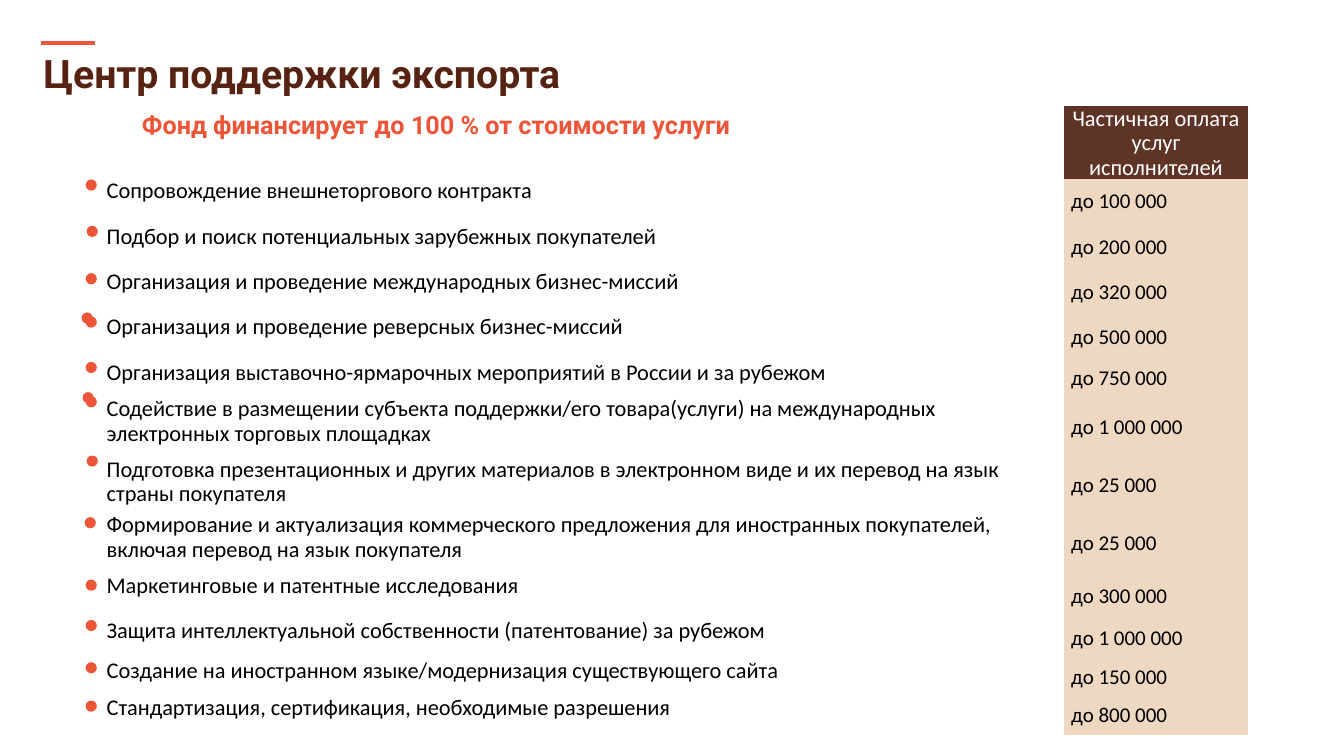
from dataclasses import dataclass

from lxml.etree import SubElement
from pptx import Presentation
from pptx.dml.color import RGBColor
from pptx.enum.shapes import MSO_CONNECTOR, MSO_SHAPE
from pptx.enum.text import MSO_ANCHOR, PP_ALIGN
from pptx.oxml.ns import qn
from pptx.util import Pt


@dataclass(frozen=True)
class Theme:
    accent: str = "ED5539"
    title: str = "562212"
    header: str = "5E3427"
    limit: str = "EED8C2"
    white: str = "FFFFFF"
    black: str = "000000"
    heading_font: str = "Roboto"
    body_font: str = "Calibri"
    title_size: float = 28
    subtitle_size: float = 18
    body_size: float = 16
    limit_size: float = 15
    spacing: float = 0.9
    plain_table: str = "{2D5ABB26-0587-4C30-8999-92F81FD0307C}"


class SlideBuilder:
    def __init__(self, prs, theme):
        self.theme = theme
        self.s = prs.slides.add_slide(prs.slide_layouts[5])

    def set_text(self, tf, text, font, size, color, bold=False,
                 align=PP_ALIGN.LEFT, spacing=1.0):
        tf.word_wrap = True
        p = tf.paragraphs[0]
        p.text = text
        p.alignment = align
        p.line_spacing = spacing
        p.font.name = font
        p.font.size = Pt(size)
        p.font.bold = bold
        p.font.color.rgb = RGBColor.from_string(color)

    def title(self, text, x, y, w, h):
        t = self.theme
        sp = self.s.shapes.title
        sp.left, sp.top, sp.width, sp.height = Pt(x), Pt(y), Pt(w), Pt(h)
        sp.text_frame.vertical_anchor = MSO_ANCHOR.MIDDLE
        self.set_text(sp.text_frame, text, t.heading_font, t.title_size,
                      t.title, bold=True, spacing=t.spacing)

    def subtitle(self, text, x, y, w, h):
        t = self.theme
        sp = self.s.shapes.add_textbox(Pt(x), Pt(y), Pt(w), Pt(h))
        self.set_text(sp.text_frame, text, t.heading_font, t.subtitle_size,
                      t.accent, bold=True, align=PP_ALIGN.CENTER)

    def rule(self, x1, x2, y, width):
        line = self.s.shapes.add_connector(
            MSO_CONNECTOR.STRAIGHT, Pt(x1), Pt(y), Pt(x2), Pt(y))
        line.line.color.rgb = RGBColor.from_string(self.theme.accent)
        line.line.width = Pt(width)
        SubElement(line._element.spPr, qn("a:effectLst"))

    def dot(self, x, y, size=8):
        sp = self.s.shapes.add_shape(
            MSO_SHAPE.OVAL, Pt(x), Pt(y), Pt(size), Pt(size))
        sp.shadow.inherit = False
        sp.fill.solid()
        sp.fill.fore_color.rgb = RGBColor.from_string(self.theme.accent)
        sp.line.fill.background()

    def table(self, x, y, widths, heights):
        table = self.s.shapes.add_table(
            len(heights), len(widths), Pt(x), Pt(y),
            Pt(sum(widths)), Pt(sum(heights))).table
        table.first_row = table.horz_banding = False
        style = table._tbl.tblPr.find(qn("a:tableStyleId"))
        style.text = self.theme.plain_table
        for column, width in zip(table.columns, widths):
            column.width = Pt(width)
        for row, height in zip(table.rows, heights):
            row.height = Pt(height)
        return table

    def cell(self, cell, text, size, color, fill=None, align=PP_ALIGN.LEFT):
        t = self.theme
        cell.margin_left = cell.margin_right = Pt(5)
        cell.margin_top = cell.margin_bottom = 0
        if fill:
            cell.fill.solid()
            cell.fill.fore_color.rgb = RGBColor.from_string(fill)
            cell.vertical_anchor = MSO_ANCHOR.MIDDLE
        else:
            cell.fill.background()
        self.set_text(cell.text_frame, text, t.body_font, size, color,
                      align=align, spacing=t.spacing)


# Service, limit, row height, dot left and dot top
SERVICES = [
    ("Сопровождение внешнеторгового контракта",
     "до 100 000", 32.4, 61.2, 128.2),
    ("Подбор и поиск потенциальных зарубежных покупателей",
     "до 200 000", 32.4, 61.9, 161.3),
    ("Организация и проведение международных бизнес-миссий",
     "до 320 000", 32.4, 61.2, 195.1),
    ("Организация и проведение реверсных бизнес-миссий",
     "до 500 000", 32.4, 61.2, 226.1),
    ("Организация выставочно-ярмарочных мероприятий в России и за рубежом",
     "до 750 000", 25.9, 61.2, 258.5),
    ("Содействие в размещении субъекта поддержки/его товара(услуги) "
     "на международных электронных торговых площадках",
     "до 1 000 000", 43.2, 61.2, 283),
    ("Подготовка презентационных и других материалов в электронном виде "
     "и их перевод на язык страны покупателя",
     "до 25 000", 39.6, 61.9, 325.4),
    ("Формирование и актуализация коммерческого предложения "
     "для иностранных покупателей, включая перевод на язык покупателя",
     "до 25 000", 43.9, 60.5, 369.4),
    ("Маркетинговые и патентные исследования",
     "до 300 000", 31.7, 61.2, 414),
    ("Защита интеллектуальной собственности (патентование) за рубежом",
     "до 1 000 000", 28.8, 61.2, 442.8),
    ("Создание на иностранном языке/модернизация существующего сайта",
     "до 150 000", 26.6, 61.2, 473),
    ("Стандартизация, сертификация, необходимые разрешения",
     "до 800 000", 28.1, 61.2, 500.4),
]
EXTRA_DOTS = [(58.3, 223.2), (59, 280.1)]
HEADER_HEIGHT = 52


def main():
    prs = Presentation()
    prs.slide_width, prs.slide_height = Pt(960), Pt(540)
    theme = Theme()
    slide = SlideBuilder(prs, theme)

    # Heading
    slide.rule(29.5, 67.7, 31, 3)
    slide.title("Центр поддержки экспорта", 23.8, 36, 422.6, 36)
    slide.subtitle("Фонд финансирует до 100 % от стоимости услуги",
                   71.8, 74.9, 479.5, 28.8)

    # Services and their limits
    heights = [HEADER_HEIGHT] + [height for _, _, height, _, _ in SERVICES]
    table = slide.table(71.2, 76, [689, 131], heights)
    slide.cell(table.cell(0, 0), "", theme.body_size, theme.black)
    slide.cell(table.cell(0, 1), "Частичная оплата услуг исполнителей",
               theme.body_size, theme.white, theme.header, PP_ALIGN.CENTER)
    for i, (service, limit, _, _, _) in enumerate(SERVICES, 1):
        slide.cell(table.cell(i, 0), service, theme.body_size, theme.black)
        slide.cell(table.cell(i, 1), limit, theme.limit_size, theme.black,
                   theme.limit)

    # Dots beside the services
    for x, y in [row[3:] for row in SERVICES] + EXTRA_DOTS:
        slide.dot(x, y)

    prs.save("out.pptx")


if __name__ == "__main__":
    main()
